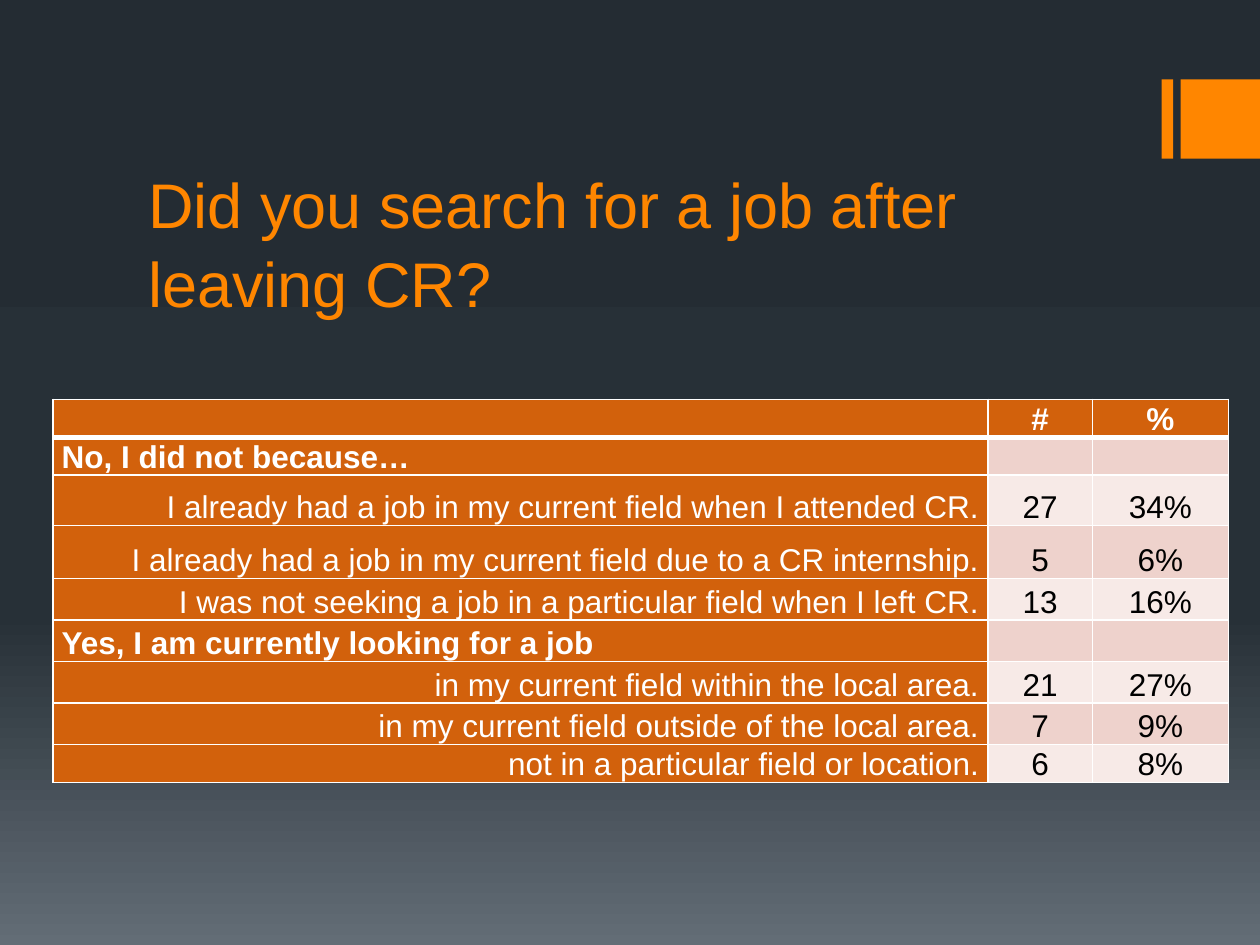
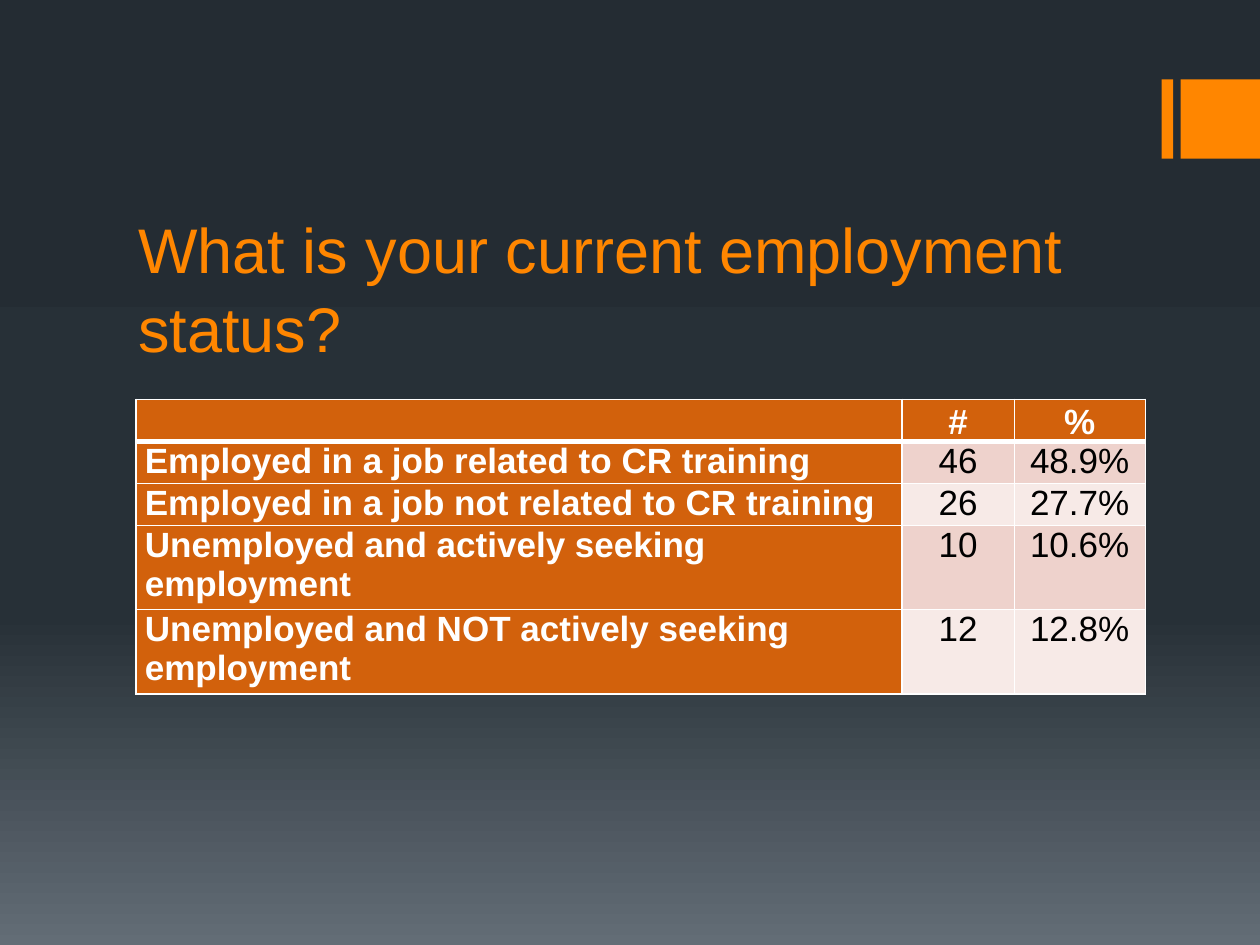
import pptx
import pptx.util
import pptx.dml.color
import pptx.enum.shapes
import pptx.enum.text
import pptx.oxml
import pptx.oxml.ns

ORANGE, RUST, WHITE, BLACK = "FF8600", "D2610C", "FFFFFF", "000000"
BANDS = ["F7EAE7", "EED2CC"]
BACKGROUND_STOPS = [(0, "242C33"), (65, "273037"), (100, "636D76")]
INCH = pptx.util.Inches
ALIGN = pptx.enum.text.PP_ALIGN
ANCHOR = pptx.enum.text.MSO_ANCHOR


def color(hex_string):
    return pptx.dml.color.RGBColor.from_string(hex_string)


def write(frame, text, size, ink, bold=False, align=ALIGN.LEFT, spacing=1.0):
    para = frame.paragraphs[0]
    para.alignment = align
    para.line_spacing = spacing
    if text:
        span = para.add_run()
        span.text = text
        span.font.name = "Arial"
        span.font.size = pptx.util.Pt(size)
        span.font.bold = bold
        span.font.color.rgb = color(ink)


pages = [
    {
        "title": "Did you search for a job after leaving CR?",
        "title_at": (1.08, 1.33),
        "table_left": 0.42,
        "columns": [7.42, 0.83, 1.08],
        "heights": [0.3, 0.3, 0.4, 0.42, 0.33, 0.33, 0.33, 0.33, 0.3],
        "size": 18,
        "anchor": ANCHOR.BOTTOM,
        "rows": [
            ("", "#", "%"),
            ("No, I did not because…", "", ""),
            ("I already had a job in my current field when I attended CR.", "27", "34%"),
            ("I already had a job in my current field due to a CR internship.", "5", "6%"),
            ("I was not seeking a job in a particular field when I left CR.", "13", "16%"),
            ("Yes, I am currently looking for a job", "", ""),
            ("in my current field within the local area.", "21", "27%"),
            ("in my current field outside of the local area.", "7", "9%"),
            ("not in a particular field or location.", "6", "8%"),
        ],
        "headings": [1, 5],
    },
    {
        "title": "What is your current employment status?",
        "title_at": (1, 1.69),
        "table_left": 1.08,
        "columns": [6.08, 0.89, 1.04],
        "heights": [0.31, 0.31, 0.31, 0.62, 0.62],
        "size": 20,
        "anchor": ANCHOR.TOP,
        "rows": [
            ("", "#", "%"),
            ("Employed in a job related to CR training", "46", "48.9%"),
            ("Employed in a job not related to CR training", "26", "27.7%"),
            ("Unemployed and actively seeking employment", "10", "10.6%"),
            ("Unemployed and NOT actively seeking employment", "12", "12.8%"),
        ],
        "headings": [1, 2, 3, 4],
    },
]

deck = pptx.Presentation()
deck.slide_width, deck.slide_height = INCH(10), INCH(7.5)

master = deck.slide_master
backdrop = master.background.fill
backdrop.gradient()
backdrop.gradient_angle = 270
stops = next(master.element.iter(pptx.oxml.ns.qn("a:gsLst")))
for stop in list(stops):
    stops.remove(stop)
for share, tone in BACKGROUND_STOPS:
    stops.append(pptx.oxml.parse_xml(
        f'<a:gs {pptx.oxml.ns.nsdecls("a")} pos="{share * 1000}">'
        f'<a:srgbClr val="{tone}"/></a:gs>'))

for page in pages:
    slide = deck.slides.add_slide(deck.slide_layouts[6])

    for left, width in [(9.22, 0.09), (9.37, 0.63)]:
        block = slide.shapes.add_shape(
            pptx.enum.shapes.MSO_SHAPE.RECTANGLE,
            INCH(left), INCH(0.63), INCH(width), INCH(0.63))
        block.shadow.inherit = False
        block.fill.solid()
        block.fill.fore_color.rgb = color(ORANGE)
        block.line.fill.background()

    left, top = page["title_at"]
    title = slide.shapes.add_textbox(INCH(left), INCH(top), INCH(8), INCH(1.26))
    title.text_frame.word_wrap = True
    title.text_frame.vertical_anchor = ANCHOR.BOTTOM
    write(title.text_frame, page["title"], 36, ORANGE, spacing=1.05)

    table = slide.shapes.add_table(
        len(page["rows"]), len(page["columns"]), INCH(page["table_left"]), INCH(3.17),
        INCH(sum(page["columns"])), INCH(sum(page["heights"]))).table
    table.first_row = table.horz_banding = False
    for column, width in zip(table.columns, page["columns"]):
        column.width = INCH(width)

    for row, texts in enumerate(page["rows"]):
        table.rows[row].height = INCH(page["heights"][row])
        for column, text in enumerate(texts):
            cell = table.cell(row, column)
            cell.margin_left = cell.margin_right = INCH(0.07)
            cell.margin_top = cell.margin_bottom = 0
            cell.vertical_anchor = ANCHOR.BOTTOM if row == 0 else page["anchor"]

            thick_side = {0: "B", 1: "T"}.get(row)
            for side in "LRTB":
                weight = pptx.util.Pt(3 if side == thick_side else 1)
                cell._tc.get_or_add_tcPr().append(pptx.oxml.parse_xml(
                    f'<a:ln{side} {pptx.oxml.ns.nsdecls("a")} w="{weight}"><a:solidFill>'
                    f'<a:srgbClr val="{WHITE}"/></a:solidFill></a:ln{side}>'))

            is_value = row > 0 and column > 0
            is_heading = row == 0 or (column == 0 and row in page["headings"])
            cell.fill.solid()
            cell.fill.fore_color.rgb = color(BANDS[row % 2] if is_value else RUST)
            if column > 0:
                align = ALIGN.CENTER
            else:
                align = ALIGN.LEFT if is_heading else ALIGN.RIGHT
            write(cell.text_frame, text, page["size"], BLACK if is_value else WHITE,
                  bold=is_heading, align=align)

deck.save("out.pptx")
